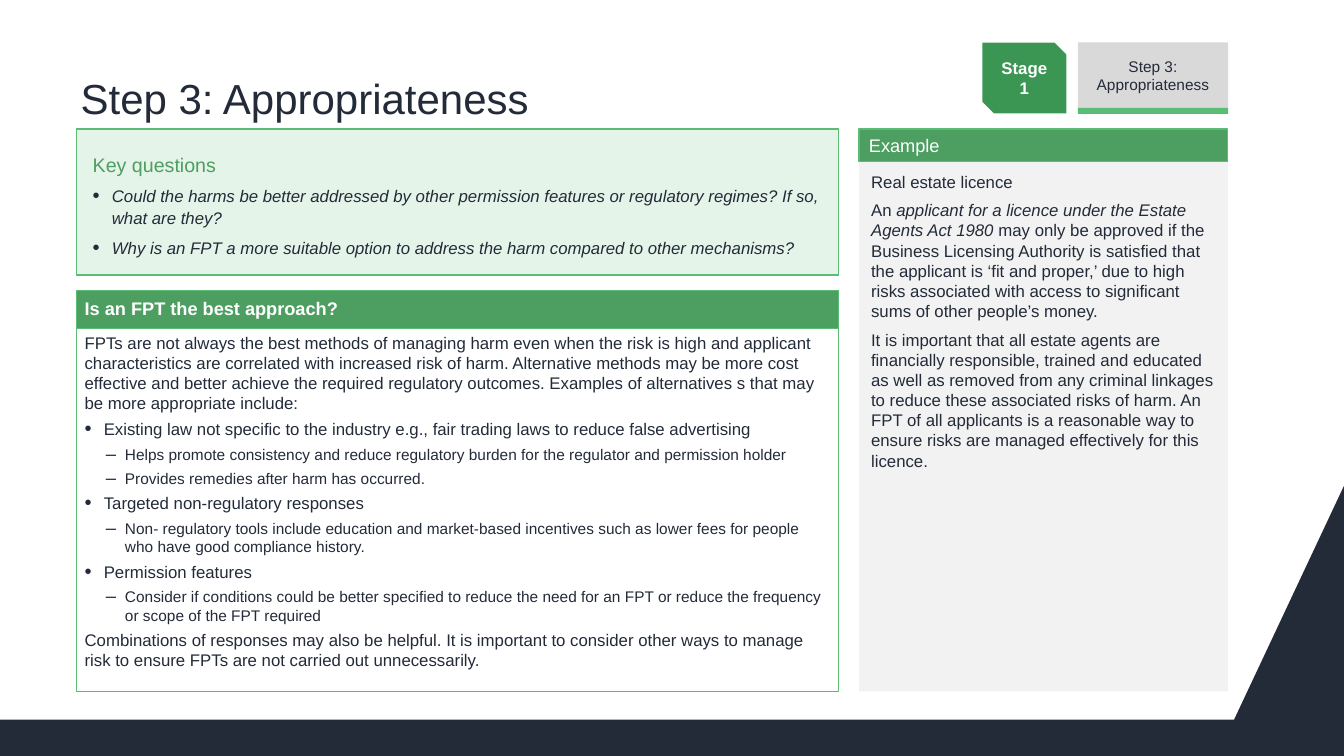
import dataclasses

import pptx
import pptx.dml.color
import pptx.enum.shapes
import pptx.enum.text
import pptx.oxml.ns
import pptx.util
from lxml import etree

Inches = pptx.util.Inches
Pt = pptx.util.Pt
SHAPE = pptx.enum.shapes.MSO_SHAPE
ANCHOR = pptx.enum.text.MSO_ANCHOR
CENTER = pptx.enum.text.PP_ALIGN.CENTER


@dataclasses.dataclass(frozen=True)
class Theme:
    font: str = "Arial"
    navy: str = "232B39"
    white: str = "FFFFFF"
    header: str = "4C9E61"
    accent: str = "5BBD74"
    stage: str = "3C9653"
    mint: str = "E5F4E9"
    step: str = "D9D9D9"
    panel: str = "F2F2F2"
    title_size: int = 30
    question_size: int = 14
    header_size: int = 13
    body_size: int = 12
    detail_size: int = 11


THEME = Theme()
LEFT, TOP, BOTTOM = 0.76, 1.28, 6.86
MAIN_WIDTH = 7.56
EXAMPLE_LEFT, EXAMPLE_WIDTH = 8.52, 3.66
STEP_LEFT, STEP_WIDTH = 10.69, 1.49
APPROACH_TOP, APPROACH_SPLIT = 2.88, 3.26

POINT = {"bullet": "•", "margin": 0.19}
DETAIL = {"bullet": "–", "margin": 0.4, "size": THEME.detail_size}
QUESTION = {**POINT, "italic": True}

KEY_QUESTIONS = [
    ("Key questions", {"size": THEME.question_size, "color": THEME.header}),
    ("Could the harms be better addressed by other permission features or regulatory regimes? "
     "If so, what are they?", QUESTION),
    ("Why is an FPT a more suitable option to address the harm compared to other mechanisms?", QUESTION),
]
APPROACH = [
    ("FPTs are not always the best methods of managing harm even when the risk is high and applicant "
     "characteristics are correlated with increased risk of harm. Alternative methods may be more cost "
     "effective and better achieve the required regulatory outcomes. Examples of alternatives s that may "
     "be more appropriate include:", {}),
    ("Existing law not specific to the industry e.g., fair trading laws to reduce false advertising", POINT),
    ("Helps promote consistency and reduce regulatory burden for the regulator and permission holder", DETAIL),
    ("Provides remedies after harm has occurred.", DETAIL),
    ("Targeted non-regulatory responses", POINT),
    ("Non- regulatory tools include education and market-based incentives such as lower fees for people "
     "who have good compliance history.", DETAIL),
    ("Permission features", POINT),
    ("Consider if conditions could be better specified to reduce the need for an FPT or reduce the "
     "frequency or scope of the FPT required", DETAIL),
    ("Combinations of responses may also be helpful. It is important to consider other ways to manage "
     "risk to ensure FPTs are not carried out unnecessarily.", {}),
]
EXAMPLE = [
    ("Real estate licence", {}),
    ([("An ", False),
      ("applicant for a licence under the Estate Agents Act 1980 ", True),
      ("may only be approved if the Business Licensing Authority is satisfied that the applicant is "
       "‘fit and proper,’ due to high risks associated with access to significant sums of other "
       "people’s money.", False)], {}),
    ("It is important that all estate agents are financially responsible, trained and educated as well as "
     "removed from any criminal linkages to reduce these associated risks of harm. An FPT of all applicants "
     "is a reasonable way to ensure risks are managed effectively for this licence.", {}),
]


def rgb(color):
    return pptx.dml.color.RGBColor.from_string(color)


def apply_format(target, values):
    for name, value in values.items():
        setattr(target, name, value)


def paint(shape, fill, line=None, line_width=1):
    shape.shadow.inherit = False
    shape.fill.solid()
    shape.fill.fore_color.rgb = rgb(fill)
    if line:
        shape.line.color.rgb = rgb(line)
        shape.line.width = Pt(line_width)
    else:
        shape.line.fill.background()


def add_bullet(paragraph, character, margin):
    properties = paragraph._p.get_or_add_pPr()
    properties.set("marL", str(Inches(margin)))
    properties.set("indent", str(-Inches(POINT["margin"])))
    for tag, attribute, value in (
        ("a:buSzPct", "val", "120000"),
        ("a:buFont", "typeface", THEME.font),
        ("a:buChar", "char", character),
    ):
        etree.SubElement(properties, pptx.oxml.ns.qn(tag)).set(attribute, value)


def write_text(shape, content, insets=(0.1, 0.05, 0.1, 0.05), anchor=ANCHOR.MIDDLE, spacing=None, **base):
    frame = shape.text_frame
    sides = ("margin_left", "margin_top", "margin_right", "margin_bottom")
    apply_format(frame, {
        "word_wrap": True,
        "auto_size": pptx.enum.text.MSO_AUTO_SIZE.NONE,
        "vertical_anchor": anchor,
        **{side: Inches(inset) for side, inset in zip(sides, insets)},
    })
    for index, (text, own) in enumerate(content):
        style = {"size": THEME.body_size, "color": THEME.navy, **base, **own}
        paragraph = frame.add_paragraph() if index else frame.paragraphs[0]
        apply_format(paragraph, {"alignment": style.get("align", pptx.enum.text.PP_ALIGN.LEFT),
                                 **(spacing or {})})
        if "bullet" in style:
            add_bullet(paragraph, style["bullet"], style["margin"])
        runs = [(text, style.get("italic", False))] if isinstance(text, str) else text
        for words, italic in runs:
            run = paragraph.add_run()
            run.text = words
            apply_format(run.font, {"name": THEME.font, "size": Pt(style["size"]),
                                    "bold": style.get("bold", False), "italic": italic})
            run.font.color.rgb = rgb(style["color"])


def add_block(slide, box, fill, content=(), line=None, line_width=1, outline=SHAPE.RECTANGLE, **text):
    block = slide.shapes.add_shape(outline, *map(Inches, box))
    paint(block, fill, line, line_width)
    if content:
        write_text(block, content, **text)


def add_footer(slide):
    start, *rest = [(Inches(x), Inches(y)) for x, y in (
        (12.24, 7.14), (0, 7.14), (0, 7.5), (13.33, 7.5), (13.33, 4.82))]
    builder = slide.shapes.build_freeform(*start)
    builder.add_line_segments(rest, close=True)
    paint(builder.convert_to_shape(), THEME.navy)


def add_title(slide):
    title = slide.shapes.title
    apply_format(title, {"left": Inches(LEFT), "top": Inches(0.15),
                         "width": Inches(11.43), "height": Inches(1.13)})
    write_text(title, [("Step 3: Appropriateness", {})], (0.04, 0.05, 0.04, 0.05), ANCHOR.BOTTOM,
               {"line_spacing": 0.9}, size=THEME.title_size)


def add_stage_marker(slide):
    add_block(slide, (9.73, 0.41, 0.86, 0.73), THEME.stage, [("Stage 1", {})], THEME.white, 2,
              SHAPE.SNIP_2_DIAG_RECTANGLE, color=THEME.white, bold=True, align=CENTER)
    add_block(slide, (STEP_LEFT, 0.42, STEP_WIDTH, 0.65), THEME.step, [("Step 3: Appropriateness", {})],
              size=THEME.detail_size, align=CENTER)
    add_block(slide, (STEP_LEFT, 1.07, STEP_WIDTH, 0.06), THEME.accent)


def add_example(slide):
    panel_top = 1.58
    add_block(slide, (EXAMPLE_LEFT, panel_top, EXAMPLE_WIDTH, BOTTOM - panel_top), THEME.panel, EXAMPLE,
              insets=(0.12,) * 4, anchor=ANCHOR.TOP, spacing={"space_before": Pt(6)})
    add_block(slide, (EXAMPLE_LEFT, TOP, EXAMPLE_WIDTH, 0.32), THEME.header, [("Example", {})],
              THEME.accent, 0.75, size=THEME.header_size, color=THEME.white)


def add_approach(slide):
    insets = (0.08, 0.04, 0.08, 0.04)
    add_block(slide, (LEFT, APPROACH_TOP, MAIN_WIDTH, APPROACH_SPLIT - APPROACH_TOP), THEME.header,
              [("Is an FPT the best approach?", {})], THEME.accent, insets=insets,
              spacing={"line_spacing": 0.9}, size=THEME.header_size, color=THEME.white, bold=True)
    add_block(slide, (LEFT, APPROACH_SPLIT, MAIN_WIDTH, BOTTOM - APPROACH_SPLIT), THEME.white, APPROACH,
              THEME.accent, insets=insets, anchor=ANCHOR.TOP,
              spacing={"space_before": Pt(2), "space_after": Pt(2)})


def main():
    deck = pptx.Presentation()
    apply_format(deck, {"slide_width": Inches(13.33), "slide_height": Inches(7.5)})
    slide = deck.slides.add_slide(deck.slide_layouts[5])
    add_footer(slide)
    add_title(slide)
    add_stage_marker(slide)
    add_example(slide)
    add_block(slide, (LEFT, TOP, MAIN_WIDTH, 1.45), THEME.mint, KEY_QUESTIONS, THEME.accent,
              insets=(0.16, 0.12, 0.16, 0.08), spacing={"line_spacing": 1.07, "space_after": Pt(6)})
    add_approach(slide)
    deck.save("out.pptx")


if __name__ == "__main__":
    main()
